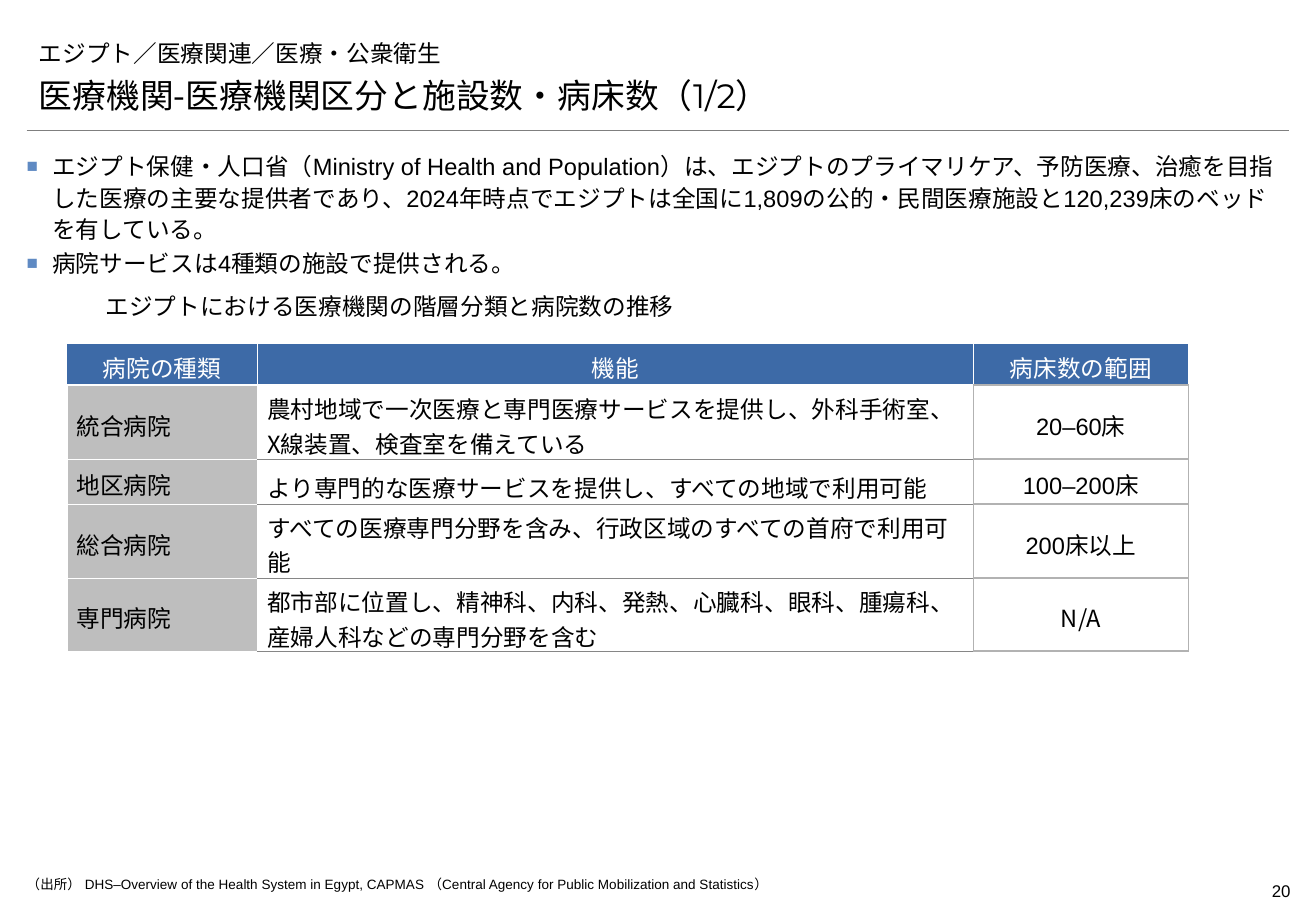
from lxml import etree
from pptx import Presentation
from pptx.dml.color import RGBColor
from pptx.enum.shapes import MSO_CONNECTOR
from pptx.enum.text import MSO_ANCHOR, PP_ALIGN
from pptx.oxml.ns import qn
from pptx.util import Inches, Pt

LEFT, MID, RIGHT = PP_ALIGN.LEFT, PP_ALIGN.CENTER, PP_ALIGN.RIGHT
TOP, CENTER, BOTTOM = MSO_ANCHOR.TOP, MSO_ANCHOR.MIDDLE, MSO_ANCHOR.BOTTOM
STRAIGHT = MSO_CONNECTOR.STRAIGHT

# Content: a line of text is a list of (text, font key) runs
TOPIC = [("エジプト／医療関連／医療・公衆衛生", "asian")]
TITLE = [("医療機関-医療機関区分と施設数・病床数（", "asian"), ("1/2）", "title")]
POINTS = [
    [("エジプト保健・人口省（Ministry of Health and Population）は、"
      "エジプトのプライマリケア、予防医療、治癒を目指した医療の主要な提供者であり、"
      "2024年時点でエジプトは全国に1,809の公的・民間医療施設と"
      "120,239床のベッドを有している。", "latin")],
    [("病院サービスは4種類の施設で提供される。", "latin")],
]
CAPTION = [("エジプトにおける医療機関の階層分類と病院数の推移", "asian")]
SOURCE = [("（出所） DHS–Overview of the Health System in Egypt, CAPMAS "
           "（Central Agency for Public Mobilization and Statistics）", "latin")]
PAGE = [("20", "latin")]
HEADS = ["病院の種類", "機能", "病床数の範囲"]
ROWS = [
    ("統合病院", "農村地域で一次医療と専門医療サービスを提供し、外科手術室、"
     "X線装置、検査室を備えている", [("20–60", "latin"), ("床", "asian")]),
    ("地区病院", "より専門的な医療サービスを提供し、すべての地域で利用可能",
     [("100–200", "latin"), ("床", "asian")]),
    ("総合病院", "すべての医療専門分野を含み、行政区域のすべての首府で利用可能",
     [("200", "latin"), ("床以上", "asian")]),
    ("専門病院", "都市部に位置し、精神科、内科、発熱、心臓科、眼科、腫瘍科、"
     "産婦人科などの専門分野を含む", [("N/A", "asian")]),
]
WIDTHS = [1.57, 5.89, 1.77]
HEIGHTS = [0.34, 0.61, 0.37, 0.61, 0.6]

THEME = {
    "font": {"asian": "Noto Sans CJK JP", "latin": "Arial", "title": "Montserrat"},
    "size": {"body": 14, "title": 20, "page": 10, "note": 8},
    "color": {"text": "000000", "white": "FFFFFF", "head": "3D6AA7",
              "label": "BEBEBE", "bullet": "5F8AC3", "rule": "7F7F7F",
              "edge": "B2B2B2", "line": "868686"},
}


def paint(name):
    return RGBColor.from_string(THEME["color"][name])


def write(para, runs, size="body", color="text", align=LEFT):
    para.alignment = align
    for text, face in runs:
        run = para.add_run()
        run.text = text
        run.font.size = Pt(THEME["size"][size])
        run.font.color.rgb = paint(color)
        run.font.name = THEME["font"][face]
        east = etree.SubElement(run.font._element, qn("a:ea"))
        east.set("typeface", THEME["font"][face])


def add_box(slide, place, lines, size="body", align=LEFT, anchor=TOP, pad=(0, 0)):
    frame = slide.shapes.add_textbox(*map(Inches, place)).text_frame
    frame.word_wrap = True
    frame.vertical_anchor = anchor
    frame.margin_left = frame.margin_right = Inches(pad[0])
    frame.margin_top = frame.margin_bottom = Inches(pad[1])
    for i, runs in enumerate(lines):
        para = frame.add_paragraph() if i else frame.paragraphs[0]
        write(para, runs, size, align=align)
    return frame


def add_bullet(para):
    props = para._p.get_or_add_pPr()
    props.set("marL", str(Inches(0.21)))
    props.set("indent", str(-Inches(0.21)))
    shade = etree.SubElement(props, qn("a:buClr"))
    etree.SubElement(shade, qn("a:srgbClr")).set("val", THEME["color"]["bullet"])
    etree.SubElement(props, qn("a:buSzPct")).set("val", "80000")
    etree.SubElement(props, qn("a:buFont")).set("typeface", "Arial")
    etree.SubElement(props, qn("a:buChar")).set("char", "■")
    para.line_spacing = 1.1
    para.space_after = Pt(2)


def set_edges(cell, edges):
    props = cell._tc.get_or_add_tcPr()
    found = [side for side in "LRTB" if side in edges]
    for i, side in enumerate(found):
        color, width = edges[side]
        line = etree.Element(qn("a:ln" + side), w=str(Pt(width)))
        fill = etree.SubElement(line, qn("a:solidFill"))
        etree.SubElement(fill, qn("a:srgbClr")).set("val", THEME["color"][color])
        props.insert(i, line)


def fill_cell(cell, runs, fill, edges, color="text", align=LEFT, anchor=CENTER):
    cell.fill.solid()
    cell.fill.fore_color.rgb = paint(fill)
    cell.vertical_anchor = anchor
    cell.margin_left = cell.margin_right = Inches(0.08)
    cell.margin_top, cell.margin_bottom = Inches(0.05), 0
    write(cell.text_frame.paragraphs[0], runs, color=color, align=align)
    set_edges(cell, edges)


def add_grid(slide):
    shape = slide.shapes.add_table(
        len(HEIGHTS), len(WIDTHS), Inches(0.55), Inches(2.83),
        Inches(sum(WIDTHS)), Inches(sum(HEIGHTS)))
    grid = shape.table
    grid.first_row = grid.horz_banding = False
    for col, width in zip(grid.columns, WIDTHS):
        col.width = Inches(width)
    for row, height in zip(grid.rows, HEIGHTS):
        row.height = Inches(height)

    thin, edge, line = ("white", 0.5), ("edge", 1), ("line", 0.5)
    for c, head in enumerate(HEADS):
        sides = {"L": thin, "R": thin}
        if c == 2:
            sides["B"] = edge
        fill_cell(grid.cell(0, c), [(head, "asian")], "head", sides, "white", MID)
    for r, (label, role, beds) in enumerate(ROWS, 1):
        above = r > 1
        fill_cell(grid.cell(r, 0), [(label, "asian")], "label",
                  {"B": thin, **({"T": thin} if above else {})})
        fill_cell(grid.cell(r, 1), [(role, "asian")], "white",
                  {"R": edge, "B": line, **({"T": line} if above else {})},
                  anchor=BOTTOM)
        fill_cell(grid.cell(r, 2), beds, "white", dict.fromkeys("LRTB", edge),
                  align=MID)


def main():
    deck = Presentation()
    deck.slide_width, deck.slide_height = Inches(10.83), Inches(7.5)
    slide = deck.slides.add_slide(deck.slide_layouts[6])

    # Heading and rule
    add_box(slide, (0.22, 0.26, 10.39, 0.34), [TOPIC], anchor=BOTTOM, pad=(0.1, 0.05))
    add_box(slide, (0.22, 0.56, 10.4, 0.44), [TITLE], "title", anchor=BOTTOM,
            pad=(0.1, 0.05))
    rule = slide.shapes.add_connector(
        STRAIGHT, Inches(0.22), Inches(1.07), Inches(10.61), Inches(1.07))
    rule.line.color.rgb = paint("rule")
    rule.line.width = Pt(0.25)
    etree.SubElement(rule._element.spPr, qn("a:effectLst"))

    # Key points
    points = add_box(slide, (0.22, 1.23, 10.39, 0.78), POINTS)
    for para in points.paragraphs:
        add_bullet(para)

    # Table with caption
    add_box(slide, (0.77, 2.35, 7.87, 0.34), [CAPTION], pad=(0.1, 0.05))
    add_grid(slide)

    # Footer
    add_box(slide, (0.22, 7.21, 9.69, 0.13), [SOURCE], "note")
    add_box(slide, (9.83, 7.2, 0.79, 0.27), [PAGE], "page", RIGHT, pad=(0, 0.05))

    deck.save("out.pptx")


if __name__ == "__main__":
    main()
